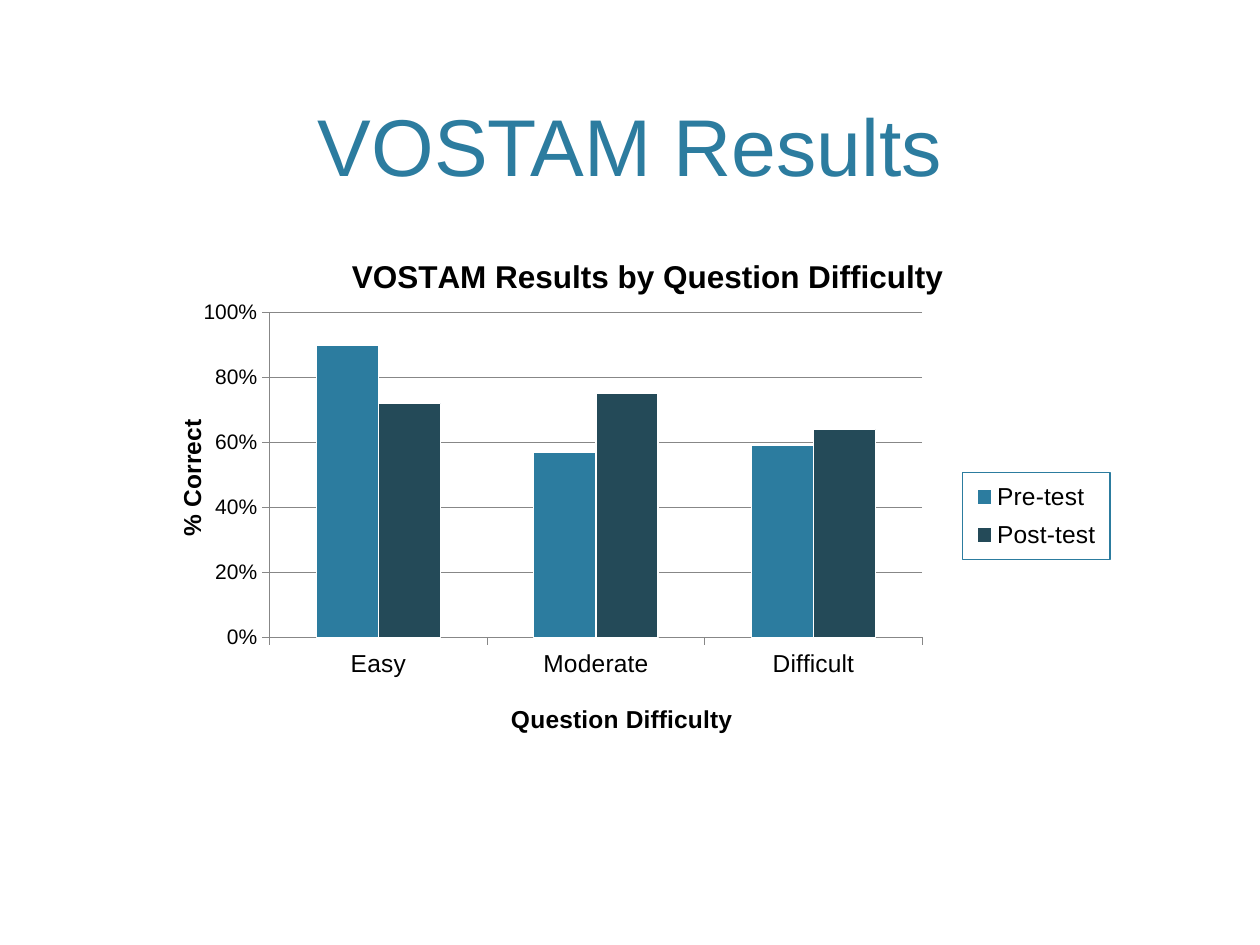
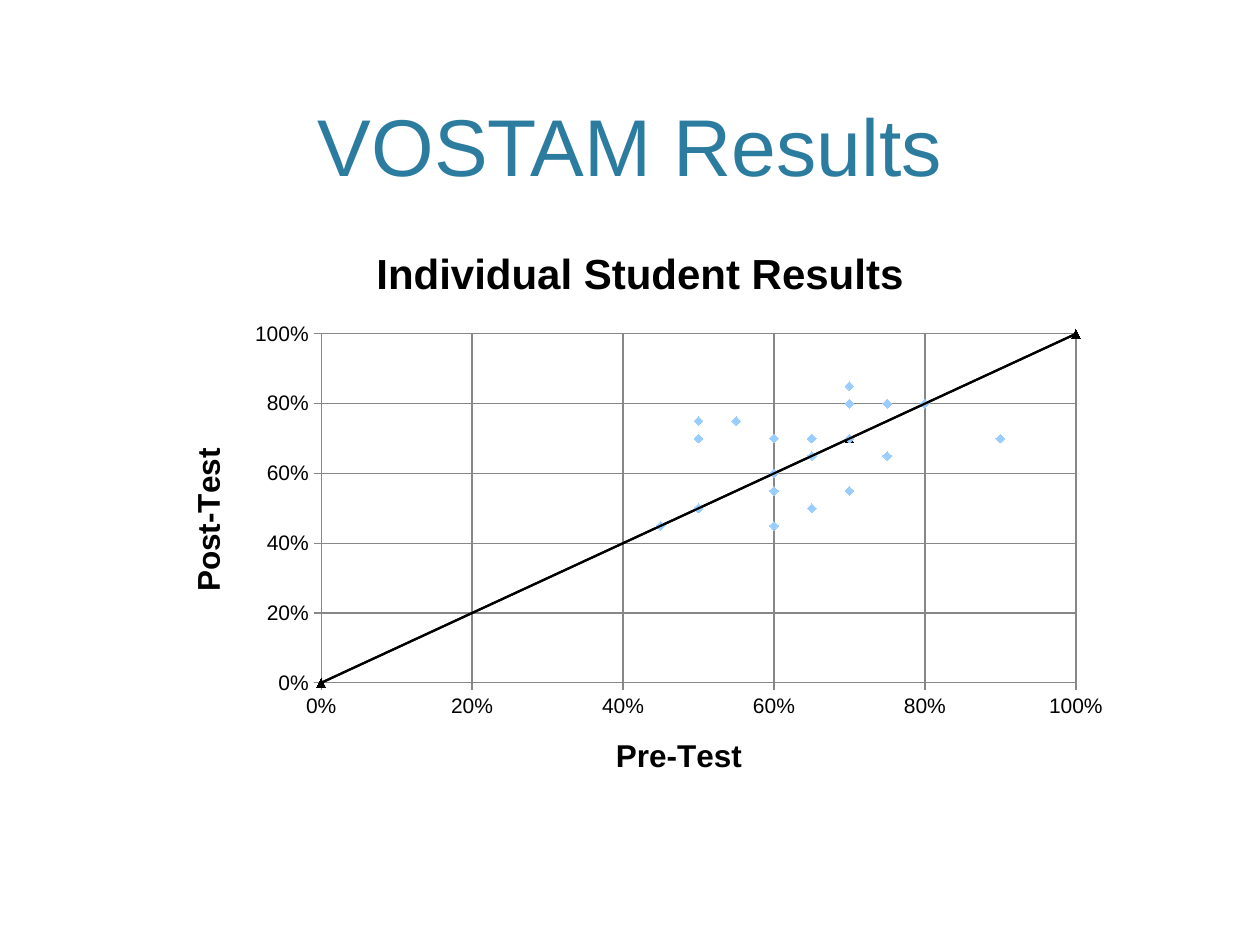
from dataclasses import dataclass
from lxml.etree import SubElement as Sub
from pptx import Presentation as Deck
from pptx.chart.data import CategoryChartData as BarData, XyChartData as DotData
from pptx.dml.color import RGBColor as Rgb
from pptx.enum.chart import XL_CHART_TYPE as Kind, XL_LEGEND_POSITION as Side
from pptx.enum.chart import XL_MARKER_STYLE as Mark, XL_TICK_MARK as Tick
from pptx.enum.text import MSO_ANCHOR as Anchor, PP_ALIGN as Align
from pptx.oxml.ns import qn
from pptx.util import Inches, Pt


@dataclass(frozen=True)
class Theme:
    """Hold the colours, font and type sizes that both slides share."""

    font: str = "Arial"
    blue: str = "2C7C9F"
    dark: str = "244A58"
    sky: str = "99CCFF"
    grey: str = "878787"
    black: str = "000000"
    white: str = "FFFFFF"
    head: int = 46
    base: int = 10
    tick: int = 12
    label: int = 14
    large: int = 18
    huge: int = 24
    thin: float = 0.75
    trend: float = 1.25


THEME = Theme()
TITLE = "VOSTAM Results"
LEVELS = ("Easy", "Moderate", "Difficult")
TESTS = {"Pre-test": (0.9, 0.57, 0.59), "Post-test": (0.72, 0.75, 0.64)}
PRE = (0.6, 0.55, 0.75, 0.65, 0.7, 0.8, 0.65, 0.6, 0.45, 0.5,
       0.6, 0.5, 0.65, 0.5, 0.75, 0.6, 0.5, 0.65, 0.7, 0.6,
       0.75, 0.7, 0.6, 0.8, 0.5, 0.9, 0.7, 0.65, 0.6)
POST = (0.6, 0.75, 0.8, 0.5, 0.55, 0.8, 0.65, 0.45, 0.45, 0.75,
        0.7, 0.7, 0.7, 0.5, 0.65, 0.6, 0.7, 0.7, 0.8, 0.55,
        0.8, 0.85, 0.7, 0.8, 0.5, 0.7, 0.7, 0.7, 0.6)
EQUAL = (0, 0.7, 1)


def style(font, size, color=THEME.black, bold=False):
    """Set face, size, colour and weight of a font."""
    font.name, font.size, font.bold = THEME.font, Pt(size), bold
    font.color.rgb = Rgb.from_string(color)


def paint(fill, color):
    """Make a fill solid in one colour."""
    fill.solid()
    fill.fore_color.rgb = Rgb.from_string(color)


def stroke(line, color, width=THEME.thin):
    """Give a line its colour and width."""
    paint(line.fill, color)
    line.width = Pt(width)


def write(frame, text, size, color=THEME.black, bold=False):
    """Put one run of text into a frame and return its paragraph."""
    para = frame.paragraphs[0]
    run = para.add_run()
    run.text = text
    style(run.font, size, color, bold)
    return para


def add_page(deck, title):
    """Add a blank slide with the shared title."""
    page = deck.slides.add_slide(deck.slide_layouts[6])
    box = page.shapes.add_textbox(*map(Inches, (0.6, 0.12, 8.8, 1.46)))
    frame = box.text_frame
    frame.word_wrap = True
    frame.vertical_anchor = Anchor.BOTTOM
    write(frame, title, THEME.head, THEME.blue).alignment = Align.CENTER
    return page


def fix(node, slot, area, size, inner=False):
    """Fix a chart part at an area in inches within a chart of this size."""
    for old in node.findall(qn("c:layout")):
        node.remove(old)
    frame = Sub(node, qn("c:layout"))
    node.insert(slot, frame)
    hand = Sub(frame, qn("c:manualLayout"))
    rules = [("layoutTarget", "inner")] if inner else []
    rules += [("xMode", "edge"), ("yMode", "edge")]
    rules += [(tag, part / full) for tag, part, full in zip("xywh", area, size * 2)]
    for tag, val in rules:
        Sub(hand, qn("c:" + tag)).set("val", str(val))


def add_chart(page, kind, place, data, title, size, plot):
    """Add a titled chart whose inner plot area has a fixed place."""
    chart = page.shapes.add_chart(kind, *map(Inches, place), data).chart
    style(chart.font, THEME.base)
    write(chart.chart_title.text_frame, title, size, bold=True)
    chart.has_legend = False
    area = chart._chartSpace.find(".//" + qn("c:plotArea"))
    fix(area, 0, plot, place[2:], inner=True)
    return chart


def set_axis(axis, title, size, tick=THEME.tick):
    """Title an axis and style its line, ticks and labels."""
    write(axis.axis_title.text_frame, title, size, bold=True)
    axis.major_tick_mark, axis.minor_tick_mark = Tick.OUTSIDE, Tick.NONE
    style(axis.tick_labels.font, tick)
    stroke(axis.format.line, THEME.grey)


def set_scale(axis):
    """Run an axis from 0% to 100% with a grid line at each fifth."""
    axis.minimum_scale, axis.maximum_scale, axis.major_unit = 0, 1, 0.2
    axis.has_major_gridlines = True
    stroke(axis.major_gridlines.format.line, THEME.grey)
    axis.tick_labels.number_format = "0%"
    axis.tick_labels.number_format_is_linked = False


def add_key(chart, area, size):
    """Add a framed legend at a fixed area on the right."""
    chart.has_legend = True
    key = chart.legend
    key.position, key.include_in_layout = Side.RIGHT, False
    style(key.font, THEME.label)
    node = key._element
    fix(node, 1, area, size)
    shape = Sub(node, qn("c:spPr"))
    node.find(qn("c:txPr")).addprevious(shape)
    line = Sub(shape, qn("a:ln"), w=str(Pt(THEME.thin)))
    fill = Sub(line, qn("a:solidFill"))
    Sub(fill, qn("a:srgbClr"), val=THEME.blue)


def set_mark(row, shape, color):
    """Style the markers of a series."""
    row.marker.style, row.marker.size = shape, 5
    paint(row.marker.format.fill, color)
    row.marker.format.line.fill.background()


def add_trend(row):
    """Add a black linear trend line to a series."""
    node = row._element
    trend = Sub(node, qn("c:trendline"))
    node.find(qn("c:xVal")).addprevious(trend)
    line = Sub(Sub(trend, qn("c:spPr")), qn("a:ln"), w=str(Pt(THEME.trend)))
    Sub(Sub(line, qn("a:solidFill")), qn("a:srgbClr"), val=THEME.black)
    Sub(trend, qn("c:trendlineType")).set("val", "linear")
    for tag in ("dispRSqr", "dispEq"):
        Sub(trend, qn("c:" + tag)).set("val", "0")


def draw_bars(page):
    """Draw the results by level as paired columns."""
    data = BarData(number_format="0%")
    data.categories = LEVELS
    for name, vals in TESTS.items():
        data.add_series(name, vals)
    size = (8, 4.06)
    chart = add_chart(page, Kind.COLUMN_CLUSTERED, (1.14, 1.85, *size), data,
                      TITLE + " by Question Difficulty", THEME.large,
                      (1, 0.63, 5.18, 2.58))
    level, score = chart.category_axis, chart.value_axis
    set_axis(level, "Question Difficulty", THEME.label, THEME.label)
    set_axis(score, "% Correct", THEME.label)
    set_scale(score)
    for axis, spot in ((level, (2.88, 3.7)), (score, (0.22, 1.44))):
        fix(axis.axis_title._element, 1, spot, size)
    add_key(chart, (6.5, 1.9, 1.17, 0.69), size)
    plot = chart.plots[0]
    plot.gap_width, plot.vary_by_categories = 150, False
    for row, color in zip(plot.series, (THEME.blue, THEME.dark)):
        paint(row.format.fill, color)
        stroke(row.format.line, THEME.white)


def draw_dots(page):
    """Draw each student as a dot against the line of equal scores."""
    data = DotData(number_format="0%")
    for name, pre, post in (("Series 1", PRE, POST), ("Series 2", EQUAL, EQUAL)):
        row = data.add_series(name)
        for x, y in zip(pre, post):
            row.add_data_point(x, y)
    chart = add_chart(page, Kind.XY_SCATTER, (1.26, 1.75, 7.64, 4.64), data,
                      "Individual Student Results", THEME.huge,
                      (1.29, 0.9, 5.99, 2.77))
    for axis, title in ((chart.category_axis, "Pre-Test"),
                        (chart.value_axis, "Post-Test")):
        set_axis(axis, title, THEME.large)
        set_scale(axis)
    plot = chart.plots[0]
    plot.vary_by_categories = False
    dots, line = plot.series
    set_mark(dots, Mark.DIAMOND, THEME.sky)
    dots.format.line.fill.background()
    set_mark(line, Mark.TRIANGLE, THEME.black)
    stroke(line.format.line, THEME.black, THEME.trend)
    add_trend(line)
    for row in (dots, line):
        row.smooth = False


def main():
    """Build both slides and save the deck."""
    deck = Deck()
    deck.slide_width, deck.slide_height = Inches(10), Inches(7.5)
    for draw in (draw_bars, draw_dots):
        draw(add_page(deck, TITLE))
    deck.save("out.pptx")


if __name__ == "__main__":
    main()
